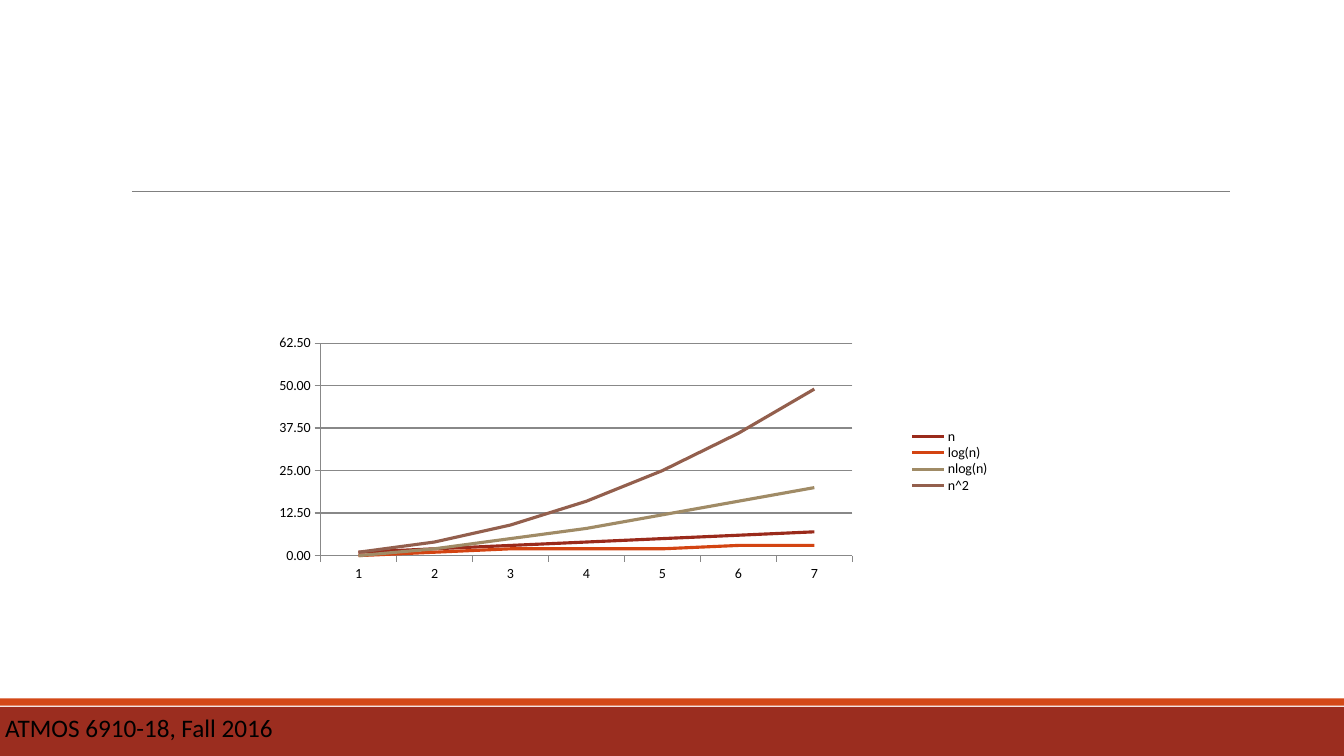
from math import log2

from lxml import etree
from pptx import Presentation
from pptx.chart.data import CategoryChartData
from pptx.dml.color import RGBColor
from pptx.enum.chart import XL_CHART_TYPE as ChartType
from pptx.enum.chart import XL_LEGEND_POSITION as LegendPos
from pptx.enum.chart import XL_TICK_MARK as Tick
from pptx.enum.shapes import MSO_CONNECTOR as Connector
from pptx.enum.shapes import MSO_SHAPE as Shape
from pptx.enum.text import MSO_ANCHOR as Anchor
from pptx.enum.text import PP_ALIGN as Align
from pptx.oxml import parse_xml
from pptx.oxml.ns import nsdecls, qn
from pptx.util import Pt

WIDTH, HEIGHT = 960, 540
FONT = "Calibri"
BLACK = RGBColor(0x00, 0x00, 0x00)
BRICK = RGBColor(0x9B, 0x2D, 0x1F)
ORANGE = RGBColor(0xD3, 0x48, 0x17)
RULE_GRAY = RGBColor(0x80, 0x80, 0x80)
AXIS_GRAY = RGBColor(0x88, 0x88, 0x88)

SIZES = range(1, 8)
GROWTH = [
    ("n", lambda n: n, RGBColor(0x9A, 0x2A, 0x1B)),
    ("log(n)", lambda n: log2(n), RGBColor(0xD3, 0x44, 0x12)),
    ("nlog(n)", lambda n: n * log2(n), RGBColor(0xA0, 0x8B, 0x66)),
    ("n^2", lambda n: n ** 2, RGBColor(0x93, 0x5F, 0x4D)),
]


def add_bar(s, x, y, w, h, color):
    bar = s.shapes.add_shape(Shape.RECTANGLE, Pt(x), Pt(y), Pt(w), Pt(h))
    bar.shadow.inherit = False
    bar.fill.solid()
    bar.fill.fore_color.rgb = color
    bar.line.fill.background()
    return bar


def add_footer(s, x, y, w, h):
    """Thin stripe, a white gap, then the course band with its label."""
    stripe_h, gap = 5.1, 0.85
    band_y = y + stripe_h + gap
    band = add_bar(s, x, band_y, w, h - stripe_h - gap, BRICK)
    add_bar(s, x, y, w, stripe_h, ORANGE)
    tf = band.text_frame
    tf.word_wrap = True
    tf.vertical_anchor = Anchor.TOP
    tf.margin_left = tf.margin_right = tf.margin_bottom = Pt(3.6)
    tf.margin_top = Pt(4)
    p = tf.paragraphs[0]
    p.text = "ATMOS 6910-18, Fall 2016"
    p.alignment = Align.LEFT
    p.font.name, p.font.size, p.font.color.rgb = FONT, Pt(18), BLACK


def add_title_rule(s, x, y, w):
    rule = s.shapes.add_connector(Connector.STRAIGHT, Pt(x), Pt(y), Pt(x + w), Pt(y))
    rule.line.color.rgb = RULE_GRAY
    rule.line.width = Pt(0.5)
    etree.SubElement(rule._element.spPr, qn("a:effectLst"))


def style_line(line, color, width):
    line.color.rgb = color
    line.width = Pt(width)


def set_layout(part, index, box, target=""):
    """Place a chart part at box, in fractions of the chart."""
    for old in part.findall(qn("c:layout")):
        part.remove(old)
    sides = "".join(f'<c:{tag} val="{val}"/>' for tag, val in zip("xywh", box))
    part.insert(index, parse_xml(
        f'<c:layout {nsdecls("c")}><c:manualLayout>{target}'
        f'<c:xMode val="edge"/><c:yMode val="edge"/>{sides}'
        '</c:manualLayout></c:layout>'))


def add_growth_chart(s, x, y, w, h):
    data = CategoryChartData()
    data.categories = [str(n) for n in SIZES]
    for name, growth, _ in GROWTH:
        data.add_series(name, [round(growth(n)) for n in SIZES])
    chart = s.shapes.add_chart(
        ChartType.LINE, Pt(x), Pt(y), Pt(w), Pt(h), data).chart
    chart.has_title = False
    chart.font.name, chart.font.size, chart.font.color.rgb = FONT, Pt(10), BLACK

    chart.has_legend = True
    chart.legend.position = LegendPos.RIGHT
    chart.legend.include_in_layout = True

    for axis in (chart.category_axis, chart.value_axis):
        axis.major_tick_mark = Tick.OUTSIDE
        axis.minor_tick_mark = Tick.NONE
        style_line(axis.format.line, AXIS_GRAY, 1)
    values = chart.value_axis
    values.minimum_scale, values.maximum_scale, values.major_unit = 0, 62.5, 12.5
    values.tick_labels.number_format = "#,##0.00"
    values.tick_labels.number_format_is_linked = False
    values.has_major_gridlines = True
    style_line(values.major_gridlines.format.line, AXIS_GRAY, 1)

    plot = chart.plots[0]
    plot.vary_by_categories = False
    for series, (_, _, color) in zip(plot.series, GROWTH):
        series.smooth = False
        style_line(series.format.line, color, 2.25)

    c_chart = chart._chartSpace.chart
    set_layout(c_chart.plotArea, 0, (0.074, 0.06, 0.715, 0.83),
               '<c:layoutTarget val="inner"/>')
    set_layout(c_chart.find(qn("c:legend")), 1, (0.86, 0.39, 0.12, 0.26))


def main():
    prs = Presentation()
    prs.slide_width, prs.slide_height = Pt(WIDTH), Pt(HEIGHT)
    s = prs.slides.add_slide(prs.slide_layouts[6])
    add_footer(s, 0, 498.9, WIDTH, HEIGHT - 498.9)
    add_title_rule(s, 94.3, 136.8, 784.4)
    add_growth_chart(s, 189.6, 234.2, 531.4, 182.9)
    prs.save("out.pptx")


if __name__ == "__main__":
    main()
